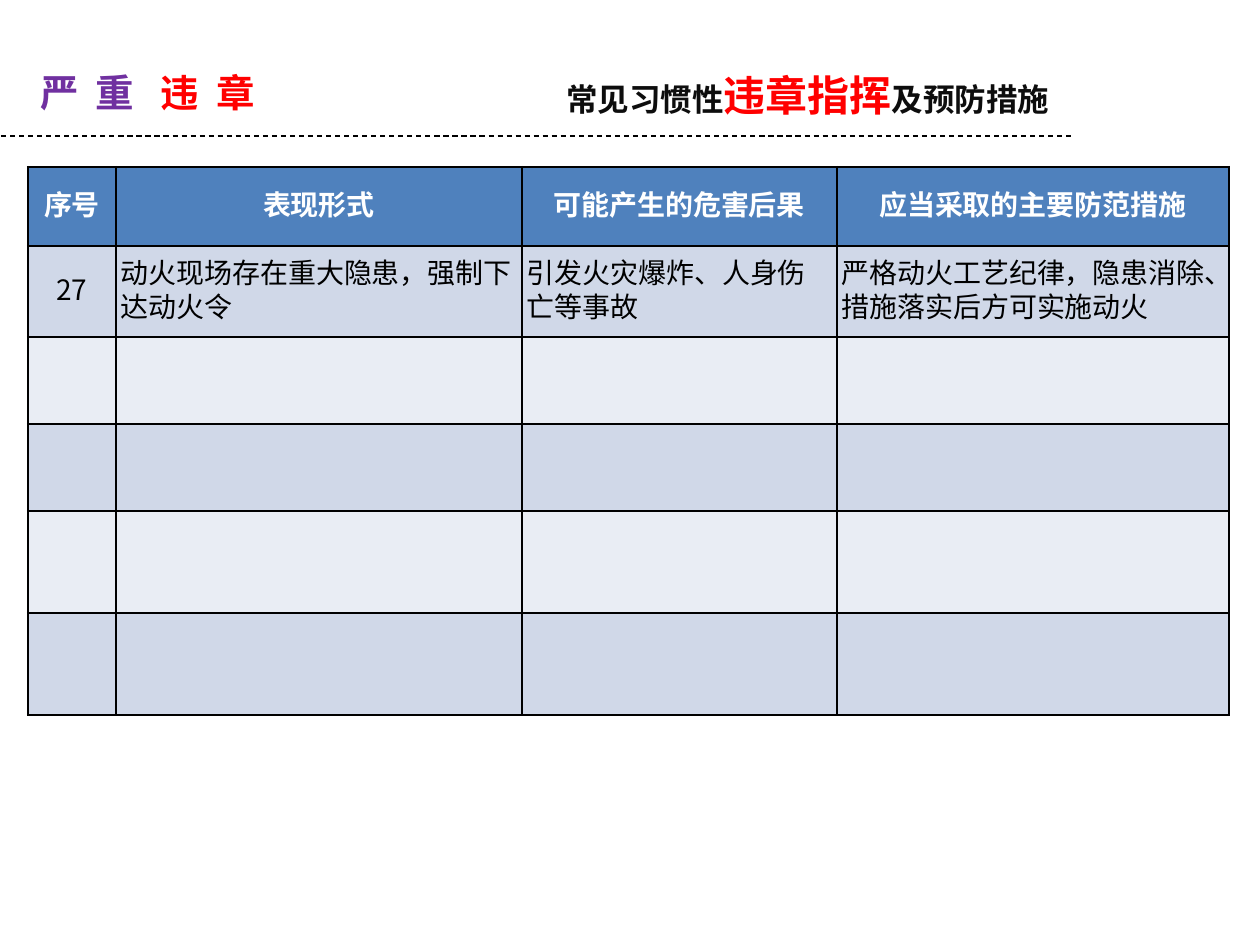
from lxml.etree import SubElement
from pptx import Presentation
from pptx.dml.color import RGBColor
from pptx.enum.dml import MSO_LINE
from pptx.enum.lang import MSO_LANGUAGE_ID
from pptx.enum.shapes import MSO_CONNECTOR
from pptx.enum.text import MSO_ANCHOR, MSO_AUTO_SIZE, PP_ALIGN
from pptx.oxml import parse_xml
from pptx.oxml.ns import nsdecls, qn
from pptx.util import Emu, Pt

PX = 914400 // 126
BLACK = RGBColor(0x00, 0x00, 0x00)
INK = RGBColor(0x0D, 0x0D, 0x0D)
WHITE = RGBColor(0xFF, 0xFF, 0xFF)
RED = RGBColor(0xFF, 0x00, 0x00)
PURPLE = RGBColor(0x70, 0x30, 0xA0)
HEADER_BLUE = RGBColor(0x4F, 0x81, 0xBD)
BANDS = [RGBColor(0xD0, 0xD8, 0xE8), RGBColor(0xE9, 0xED, 0xF4)]
CJK = "Noto Sans CJK SC"
LATIN = "Calibri"

HEADING = [
    ("常见习惯性", 18, INK, 0),
    ("违章指挥", 24, RED, 0),
    ("及预防措施", 18, INK, 0),
]
SEVERITY = [
    ("严 ", 22, PURPLE, 250),
    ("重 ", 22, PURPLE, 500),
    ("违 章", 22, RED, 250),
]
HEADING_BOX = (552, 69, 512, 44)
SEVERITY_BOX = (0, 69, 295, 59)
RULE = (1, 136, 1071, 136)

ROWS = [
    ("序号", "表现形式", "可能产生的危害后果", "应当采取的主要防范措施"),
    ("27", "动火现场存在重大隐患，强制下达动火令", "引发火灾爆炸、人身伤亡等事故",
     "严格动火工艺纪律，隐患消除、措施落实后方可实施动火"),
] + [("",) * 4] * 4
TABLE_LEFT, TABLE_TOP = 28, 167
COLUMN_WIDTHS = [88, 406, 315, 392]
ROW_HEIGHTS = [79, 91, 87, 87, 102, 102]
CELL_INSET = 5


def px(*lengths):
    return [Emu(length * PX) for length in lengths]


def apply(target, values):
    for name, value in values.items():
        setattr(target, name, value)


def add_run(paragraph, text, size, color, face, bold, spacing=0):
    run = paragraph.add_run()
    run.text = text
    apply(run.font, {"size": Pt(size), "bold": bold, "name": face,
                     "language_id": MSO_LANGUAGE_ID.SIMPLIFIED_CHINESE})
    run.font.color.rgb = color
    properties = run.font._element
    SubElement(properties, qn("a:ea")).set("typeface", CJK)
    if spacing:
        properties.set("spc", str(spacing))


def fill_line(shape, box, runs):
    apply(shape, dict(zip(("left", "top", "width", "height"), px(*box))))
    apply(shape.text_frame, {
        "word_wrap": True, "auto_size": MSO_AUTO_SIZE.NONE,
        "vertical_anchor": MSO_ANCHOR.TOP, "margin_left": 0,
        "margin_right": 0, "margin_top": 0, "margin_bottom": 0})
    paragraph = shape.text_frame.paragraphs[0]
    paragraph.alignment = PP_ALIGN.CENTER
    for text, size, color, spacing in runs:
        add_run(paragraph, text, size, color, CJK, True, spacing)


def add_borders(cell):
    properties = cell._tc.get_or_add_tcPr()
    for position, side in enumerate("LRTB"):
        properties.insert(position, parse_xml(
            f'<a:ln{side} {nsdecls("a")} w="{Pt(1.5)}"><a:solidFill>'
            f'<a:srgbClr val="{BLACK}"/></a:solidFill></a:ln{side}>'))


def fill_cell(cell, text, row, column):
    header = row == 0
    inset = CELL_INSET * PX
    apply(cell, {"vertical_anchor": MSO_ANCHOR.MIDDLE,
                 "margin_left": inset, "margin_right": inset,
                 "margin_top": inset, "margin_bottom": inset})
    cell.fill.solid()
    cell.fill.fore_color.rgb = HEADER_BLUE if header else BANDS[(row - 1) % 2]
    add_borders(cell)
    if text:
        paragraph = cell.text_frame.paragraphs[0]
        centred = header or column == 0
        apply(paragraph, {
            "alignment": PP_ALIGN.CENTER if centred else PP_ALIGN.LEFT,
            "line_spacing": Pt(19.2)})
        face = CJK if column == 0 and not header else LATIN
        add_run(paragraph, text, 16, WHITE if header else BLACK, face, header)


def add_measures_table(slide):
    frame = slide.shapes.add_table(
        len(ROWS), len(COLUMN_WIDTHS),
        *px(TABLE_LEFT, TABLE_TOP, sum(COLUMN_WIDTHS), sum(ROW_HEIGHTS)))
    table = frame.table
    for column, width in zip(table.columns, px(*COLUMN_WIDTHS)):
        column.width = width
    for row, height in zip(table.rows, px(*ROW_HEIGHTS)):
        row.height = height
    for row, texts in enumerate(ROWS):
        for column, text in enumerate(texts):
            fill_cell(table.cell(row, column), text, row, column)


def add_rule(slide):
    rule = slide.shapes.add_connector(MSO_CONNECTOR.STRAIGHT, *px(*RULE))
    apply(rule.line, {"width": Pt(0.75), "dash_style": MSO_LINE.DASH})
    rule.line.color.rgb = BLACK
    SubElement(rule._element.spPr, qn("a:effectLst"))


def main():
    deck = Presentation()
    deck.slide_width, deck.slide_height = px(1260, 945)
    slide = deck.slides.add_slide(deck.slide_layouts[5])
    fill_line(slide.shapes.title, HEADING_BOX, HEADING)
    add_rule(slide)
    add_measures_table(slide)
    severity = slide.shapes.add_textbox(*px(*SEVERITY_BOX))
    fill_line(severity, SEVERITY_BOX, SEVERITY)
    deck.save("out.pptx")


if __name__ == "__main__":
    main()
